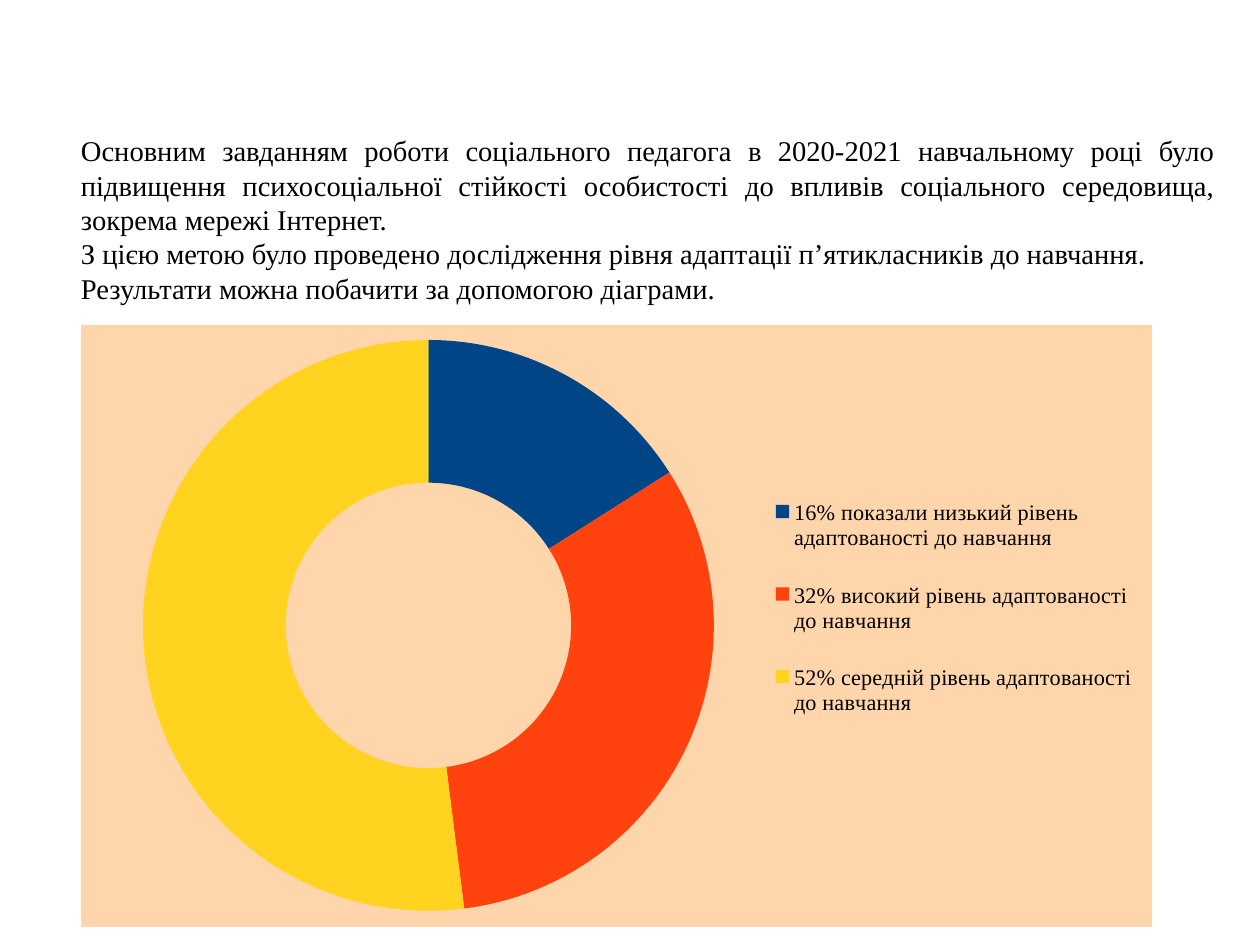
from lxml.etree import SubElement
from pptx import Presentation
from pptx.chart.data import CategoryChartData
from pptx.dml.color import RGBColor
from pptx.enum.chart import XL_CHART_TYPE, XL_LEGEND_POSITION
from pptx.enum.text import MSO_ANCHOR, PP_ALIGN
from pptx.oxml import parse_xml
from pptx.oxml.ns import nsdecls, qn
from pptx.util import Pt

EMU_PER_PX = 8000
COLORS = {
    "text": "000000",
    "panel": "FFB66C",
    "low": "004586",
    "high": "FF420E",
    "middle": "FFD320",
}
SERIF = "Times New Roman"
INTRO = [
    "Основним завданням роботи соціального педагога в 2020-2021 навчальному році було "
    "підвищення психосоціальної стійкості особистості до впливів соціального середовища, "
    "зокрема мережі Інтернет.",
    "З цією метою було проведено дослідження рівня адаптації п’ятикласників до навчання.",
    "Результати можна побачити за допомогою діаграми.",
]
LEVELS = [
    ("16% показали низький рівень адаптованості до навчання", 16, "low"),
    ("32% високий рівень адаптованості до навчання", 32, "high"),
    ("52% середній рівень адаптованості до навчання", 52, "middle"),
]


def px(length):
    return length * EMU_PER_PX


def color(name):
    return RGBColor.from_string(COLORS[name])


def style_font(font, name, size):
    font.name = name
    font.size = Pt(size)
    font.color.rgb = color("text")


def add_intro(page, left, top, width, height):
    box = page.shapes.add_textbox(px(left), px(top), px(width), px(height))
    frame = box.text_frame
    frame.word_wrap = True
    frame.vertical_anchor = MSO_ANCHOR.MIDDLE
    frame.margin_left = frame.margin_top = frame.margin_right = frame.margin_bottom = 0
    frame.text = "\n".join(INTRO)
    for para in frame.paragraphs:
        para.alignment = PP_ALIGN.JUSTIFY
        for span in para.runs:
            style_font(span.font, SERIF, 18)


def place_part(parent, index, fractions, inner=False):
    """Give a chart part a fixed place, as fractions of the chart."""
    for old in parent.findall(qn("c:layout")):
        parent.remove(old)
    layout = parse_xml(f"<c:layout {nsdecls('c')}/>")
    manual = SubElement(layout, qn("c:manualLayout"))
    if inner:
        SubElement(manual, qn("c:layoutTarget")).set("val", "inner")
    for key in "xy":
        SubElement(manual, qn(f"c:{key}Mode")).set("val", "edge")
    for key, value in zip("xywh", fractions):
        SubElement(manual, qn(f"c:{key}")).set("val", f"{value:.4f}")
    parent.insert(index, layout)


def add_level_chart(page, left, top, width, height):
    data = CategoryChartData()
    data.categories = [label for label, _, _ in LEVELS]
    data.add_series("Series 1", [value for _, value, _ in LEVELS])
    chart = page.shapes.add_chart(
        XL_CHART_TYPE.DOUGHNUT, px(left), px(top), px(width), px(height), data
    ).chart
    chart.has_title = False
    style_font(chart.font, "Arial", 10)

    # Ring slices
    plot = chart.plots[0]
    plot.vary_by_categories = True
    plot.has_data_labels = False
    for index, (_, _, name) in enumerate(LEVELS):
        slice_format = plot.series[0].points[index].format
        slice_format.fill.solid()
        slice_format.fill.fore_color.rgb = color(name)
        slice_format.line.fill.background()

    # Legend
    chart.has_legend = True
    legend = chart.legend
    legend.position = XL_LEGEND_POSITION.RIGHT
    legend.include_in_layout = False
    style_font(legend.font, SERIF, 14)

    # Ring and legend places inside the panel
    def share(x, y, w, h):
        return x / width, y / height, w / width, h / height

    chart_part = chart._chartSpace.chart
    place_part(chart_part.plotArea, 0, share(62, 15, 571, 571), inner=True)
    place_part(chart_part.find(qn("c:legend")), 1, share(689, 143, 368, 280))

    # Translucent panel behind the chart
    chart_part.addnext(parse_xml(
        f'<c:spPr {nsdecls("c", "a")}><a:solidFill><a:srgbClr val="{COLORS["panel"]}">'
        '<a:alpha val="57000"/></a:srgbClr></a:solidFill>'
        "<a:ln><a:noFill/></a:ln></c:spPr>"
    ))


def main():
    deck = Presentation()
    deck.slide_width, deck.slide_height = px(1260), px(945)
    page = deck.slides.add_slide(deck.slide_layouts[6])
    add_intro(page, 81, 140, 1134, 158)
    add_level_chart(page, 81, 325, 1071, 602)
    deck.save("out.pptx")


if __name__ == "__main__":
    main()
